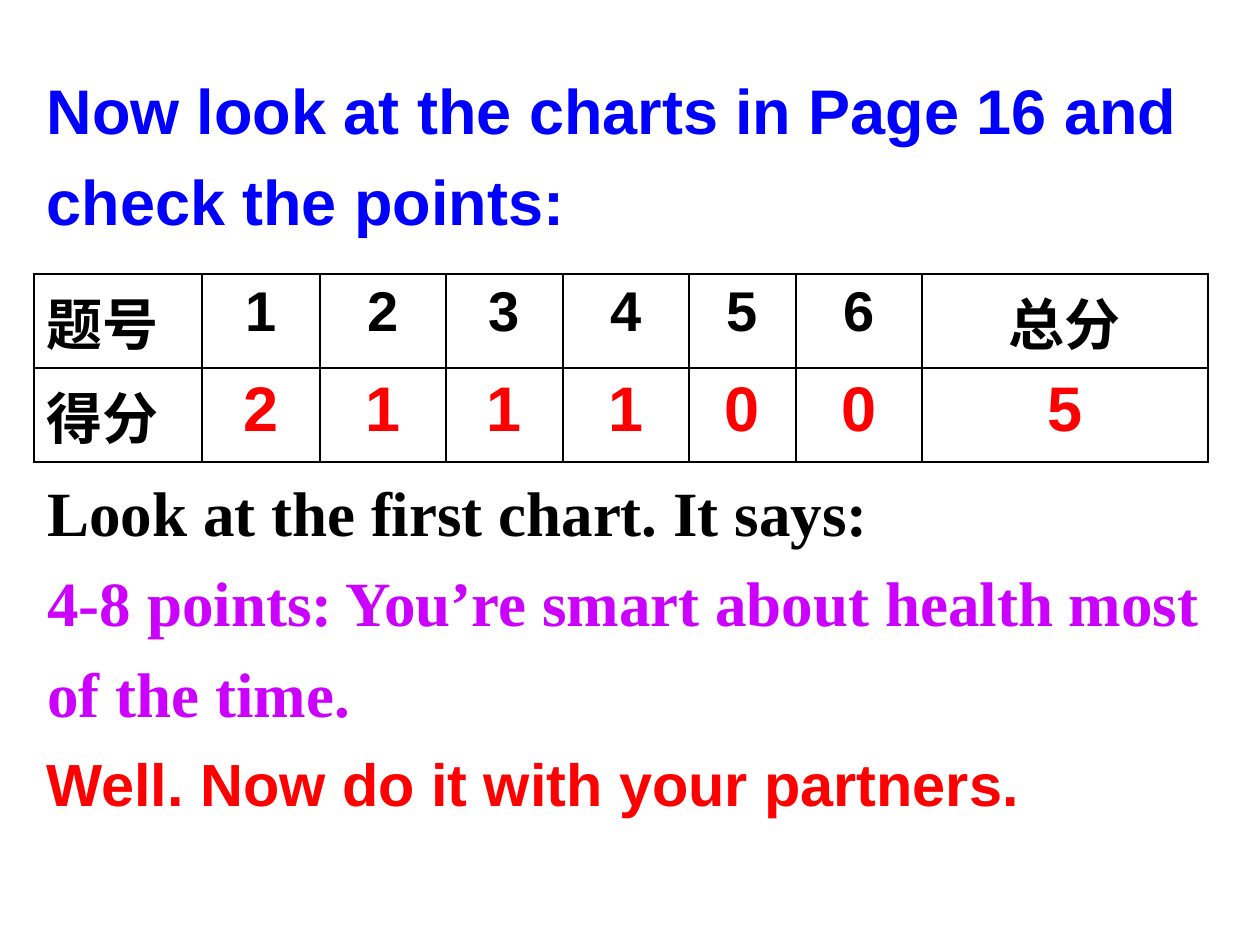
from pptx import Presentation
from pptx.dml.color import RGBColor
from pptx.enum.text import MSO_ANCHOR, MSO_AUTO_SIZE, PP_ALIGN
from pptx.oxml import parse_xml
from pptx.oxml.ns import nsdecls
from pptx.util import Pt

PX = 914400 / 126
COLORS = {"blue": "0000FF", "black": "000000", "purple": "CC00FF",
          "red": "FF0000", "white": "FFFFFF"}

TITLE = "Now look at the charts in Page 16 and check the points:"
READING = [
    ("Look at the first chart. It says:", "black"),
    ("4-8 points: You’re smart about health most", "purple"),
    ("of the time.", "purple"),
]
TASK = "Well. Now do it with your partners."
SCORES = [
    ["题号", "1", "2", "3", "4", "5", "6", "总分"],
    ["得分", "2", "1", "1", "1", "0", "0", "5"],
]
COLUMN_WIDTHS = [168, 118, 126, 117, 126, 107, 126, 286]
ROW_HEIGHTS = [80, 88]


def px(n):
    return round(n * PX)


def rgb(name):
    return RGBColor.from_string(COLORS[name])


def format_paragraph(p, size, color, font="Arial", align=PP_ALIGN.LEFT):
    p.alignment = align
    for r in p.runs:
        r.font.name = font
        r.font.size = Pt(size)
        r.font.bold = True
        r.font.color.rgb = rgb(color)


def fill_text(s, box, lines, size, font="Arial", spacing=1.0):
    s.left, s.top, s.width, s.height = map(px, box)
    tf = s.text_frame
    tf.word_wrap = True
    tf.auto_size = MSO_AUTO_SIZE.NONE
    tf.vertical_anchor = MSO_ANCHOR.TOP
    tf.text = "\n".join(text for text, _ in lines)
    for p, (_, color) in zip(tf.paragraphs, lines):
        p.line_spacing = spacing
        format_paragraph(p, size, color, font)


def add_borders(cell):
    tc_pr = cell._tc.get_or_add_tcPr()
    for i, side in enumerate(("lnL", "lnR", "lnT", "lnB")):
        tc_pr.insert(i, parse_xml(
            f'<a:{side} {nsdecls("a")} w="12700"><a:solidFill>'
            f'<a:srgbClr val="{COLORS["black"]}"/></a:solidFill></a:{side}>'))


def add_scores(slide):
    table = slide.shapes.add_table(
        len(SCORES), len(COLUMN_WIDTHS), px(34), px(274),
        px(sum(COLUMN_WIDTHS)), px(sum(ROW_HEIGHTS))).table
    for column, width in zip(table.columns, COLUMN_WIDTHS):
        column.width = px(width)
    for i, values in enumerate(SCORES):
        table.rows[i].height = px(ROW_HEIGHTS[i])
        for j, value in enumerate(values):
            cell = table.cell(i, j)
            cell.text = value
            cell.fill.solid()
            cell.fill.fore_color.rgb = rgb("white")
            is_score = i == 1 and j > 0
            format_paragraph(cell.text_frame.paragraphs[0],
                             36 if is_score else 32,
                             "red" if is_score else "black",
                             align=PP_ALIGN.CENTER if j else PP_ALIGN.LEFT)
            add_borders(cell)


def main():
    prs = Presentation()
    prs.slide_width, prs.slide_height = px(1260), px(945)
    slide = prs.slides.add_slide(prs.slide_layouts[5])
    fill_text(slide.shapes.title, (34, 50, 1166, 194),
              [(TITLE, "blue")], 36, spacing=1.2)
    reading = slide.shapes.add_textbox(0, 0, 0, 0)
    fill_text(reading, (35, 452, 1211, 285), READING, 36,
              "Times New Roman", 1.2)
    task = slide.shapes.add_textbox(0, 0, 0, 0)
    fill_text(task, (34, 741, 1062, 84), [(TASK, "red")], 34)
    add_scores(slide)
    prs.save("out.pptx")


if __name__ == "__main__":
    main()
